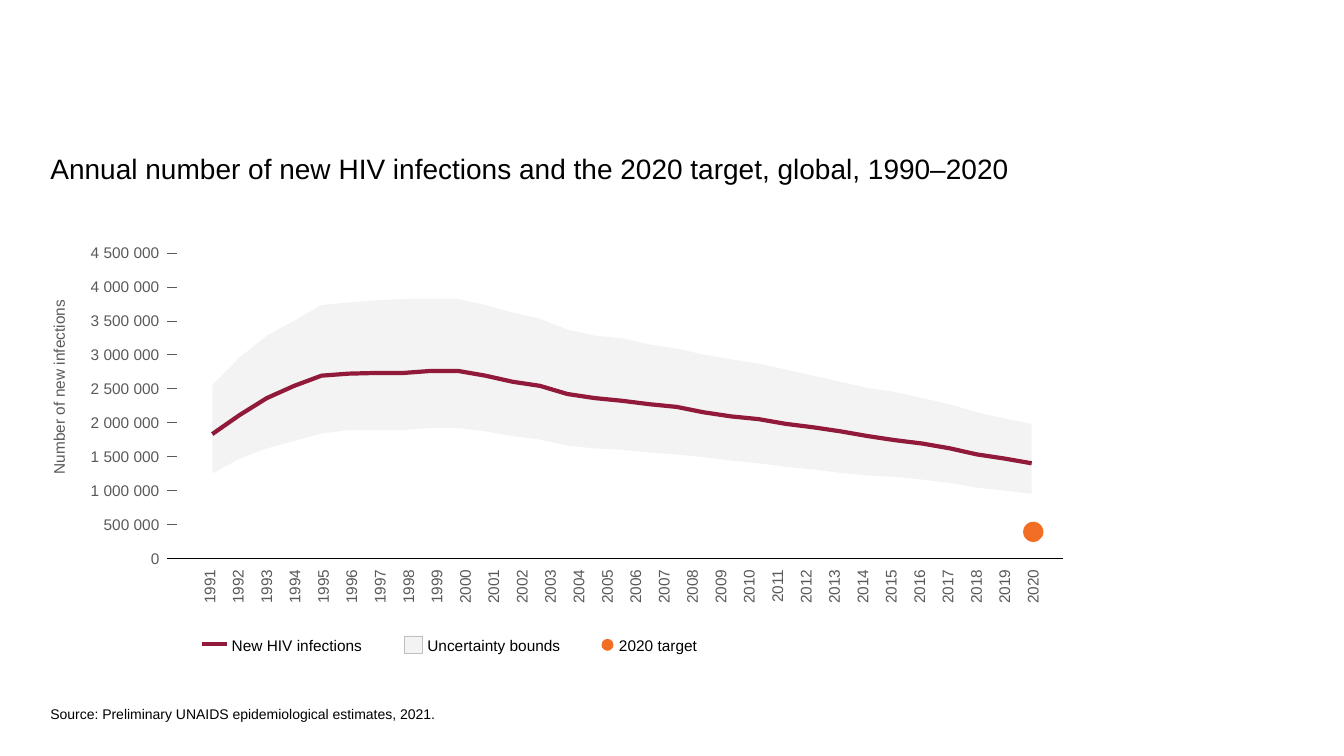
from lxml.etree import SubElement
from pptx import Presentation
from pptx.dml.color import RGBColor
from pptx.enum.shapes import MSO_CONNECTOR, MSO_SHAPE
from pptx.enum.text import MSO_ANCHOR, MSO_AUTO_SIZE, PP_ALIGN
from pptx.oxml.ns import qn
from pptx.util import Cm, Pt

HUES = {"ink": "000000", "grey": "595959", "band": "F3F3F4",
        "edge": "C0C0C0", "rate": "91193A", "goal": "F36E25"}
RATE = [1.83, 2.11, 2.36, 2.54, 2.69, 2.72, 2.73, 2.73, 2.76, 2.76, 2.69,
        2.60, 2.54, 2.42, 2.36, 2.32, 2.27, 2.23, 2.15, 2.09, 2.05, 1.98,
        1.93, 1.87, 1.80, 1.74, 1.69, 1.62, 1.53, 1.47, 1.40]
HIGH = [2.55, 2.96, 3.28, 3.50, 3.73, 3.77, 3.80, 3.82, 3.82, 3.82, 3.73,
        3.62, 3.53, 3.37, 3.28, 3.24, 3.15, 3.09, 3.00, 2.93, 2.87, 2.78,
        2.69, 2.60, 2.51, 2.45, 2.36, 2.27, 2.15, 2.06, 1.98]
LOW = [1.25, 1.47, 1.62, 1.73, 1.84, 1.89, 1.89, 1.89, 1.92, 1.92, 1.87,
       1.80, 1.75, 1.66, 1.62, 1.60, 1.56, 1.53, 1.49, 1.44, 1.40, 1.35,
       1.31, 1.26, 1.22, 1.20, 1.16, 1.11, 1.04, 1.00, 0.95]
GOAL = 0.39
PEAK = 4.5


def tint(hue):
    """Return the named colour."""
    return RGBColor.from_string(HUES[hue])


def style(shape, fill=None, edge=None, width=0.25):
    """Set fill and outline of a shape, without shadow."""
    shape.shadow.inherit = False
    if fill:
        shape.fill.solid()
        shape.fill.fore_color.rgb = tint(fill)
    else:
        shape.fill.background()
    if edge:
        shape.line.color.rgb = tint(edge)
        shape.line.width = Pt(width)
    else:
        shape.line.fill.background()


def rule(slide, x, y, end, hue, width=0.25):
    """Draw a level line from x to end."""
    line = slide.shapes.add_connector(
        MSO_CONNECTOR.STRAIGHT, Cm(x), Cm(y), Cm(end), Cm(y))
    line.line.color.rgb = tint(hue)
    line.line.width = Pt(width)
    SubElement(line._element.spPr, qn("a:effectLst"))


def label(slide, text, box, hue="ink", align=PP_ALIGN.LEFT, pad=(0, 0),
          turn=False, size=11, wrap=False):
    """Place one line of text in a box, turned upwards if asked."""
    frame = slide.shapes.add_textbox(*map(Cm, box)).text_frame
    frame.word_wrap = wrap
    frame.auto_size = MSO_AUTO_SIZE.SHAPE_TO_FIT_TEXT
    frame.margin_left = frame.margin_right = Cm(pad[0])
    frame.margin_top = frame.margin_bottom = Cm(pad[1])
    if turn:
        frame._txBody.bodyPr.set("vert", "vert270")
    para = frame.paragraphs[0]
    para.text = text
    para.alignment = align
    if size == 11:
        para.line_spacing = Pt(14)
    write(para.font, size, hue)


def write(font, size, hue):
    """Set face, size and colour of a font."""
    font.name, font.size = "Arial", Pt(size)
    font.color.rgb = tint(hue)


def trace(slide, spots, close):
    """Build a free outline through the spots."""
    spots = [(Cm(x), Cm(y)) for x, y in spots]
    pen = slide.shapes.build_freeform(*spots[0], scale=1.0)
    pen.add_line_segments(spots[1:], close=close)
    return pen.convert_to_shape()


def dot(slide, x, y, size):
    """Draw a target dot centred on x, y."""
    mark = slide.shapes.add_shape(
        MSO_SHAPE.OVAL, Cm(x - size / 2), Cm(y - size / 2), Cm(size), Cm(size))
    style(mark, "goal")


def head(slide, box, text):
    """Place the slide title."""
    title = slide.shapes.title
    title.left, title.top, title.width, title.height = map(Cm, box)
    frame = title.text_frame
    frame.margin_left = frame.margin_right = 0
    frame.margin_top = frame.margin_bottom = 0
    frame.vertical_anchor = MSO_ANCHOR.TOP
    frame.auto_size = MSO_AUTO_SIZE.NONE
    para = frame.paragraphs[0]
    para.text = text
    para.alignment = PP_ALIGN.LEFT
    write(para.font, 20, "ink")


def plot(slide, box):
    """Draw the band, the curve, the target and both axes."""
    left, top, width, height = box
    base = top + height

    def level(value):
        return base - value / PEAK * height

    def curve(values):
        step = 20.65 / (len(values) - 1)
        return [(left + 1.13 + i * step, level(v))
                for i, v in enumerate(values)]

    style(trace(slide, curve(HIGH) + curve(LOW)[::-1], True), "band")
    style(trace(slide, curve(RATE), False), edge="rate", width=3)
    dot(slide, left + 21.82, level(GOAL), 0.51)

    rule(slide, left, base, left + width, "ink")
    for i in range(10):
        y = level(i / 2)
        text = f"{i * 500000:,}".replace(",", " ")
        wide = 0.5 + sum(0.11 if c == " " else 0.22 for c in text)
        label(slide, text, (left + 0.05 - wide, y - 0.4, wide, 0.71),
              "grey", PP_ALIGN.RIGHT, (0.25, 0.13))
        if i:
            rule(slide, left, y, left + 0.25, "grey")
    label(slide, "Number of new infections",
          (left - 3.25, top + 1.06, 0.97, 4.67),
          "grey", PP_ALIGN.RIGHT, (0.25, 0.13), True)

    step = 20.75 / 29
    for i in range(30):
        label(slide, str(1991 + i),
              (left + 0.74 + i * step, base + 0.28, 0.56, 0.86),
              "grey", PP_ALIGN.RIGHT, (0.05, 0), True)


def legend(slide, box):
    """Draw the three keys in a row."""
    left, top, _, height = box
    mid = top + height / 2
    rule(slide, left, mid, left + 0.64, "rate", 2.5)
    patch = slide.shapes.add_shape(
        MSO_SHAPE.RECTANGLE, Cm(left + 5.11), Cm(top + 0.02), Cm(0.45), Cm(0.45))
    style(patch, "band", "edge")
    dot(slide, left + 10.23, mid + 0.02, 0.3)
    for text, x, wide in (("New HIV infections", 0.76, 3.3),
                          ("Uncertainty bounds", 5.69, 3.38),
                          ("2020 target", 10.52, 1.98)):
        label(slide, text, (left + x, top, wide, height))


def main():
    """Build and save the slide."""
    deck = Presentation()
    deck.slide_width, deck.slide_height = Cm(33.87), Cm(19.05)
    slide = deck.slides.add_slide(deck.slide_layouts[5])
    head(slide, (1.27, 3.81, 31.75, 1.2),
         "Annual number of new HIV infections and the 2020 target, "
         "global, 1990–2020")
    plot(slide, (4.22, 6.37, 22.58, 7.7))
    legend(slide, (5.08, 16, 12.5, 0.46))
    label(slide, "Source: Preliminary UNAIDS epidemiological estimates, 2021.",
          (1.27, 17.78, 30.73, 0.43), size=10, wrap=True)
    deck.save("out.pptx")


if __name__ == "__main__":
    main()
